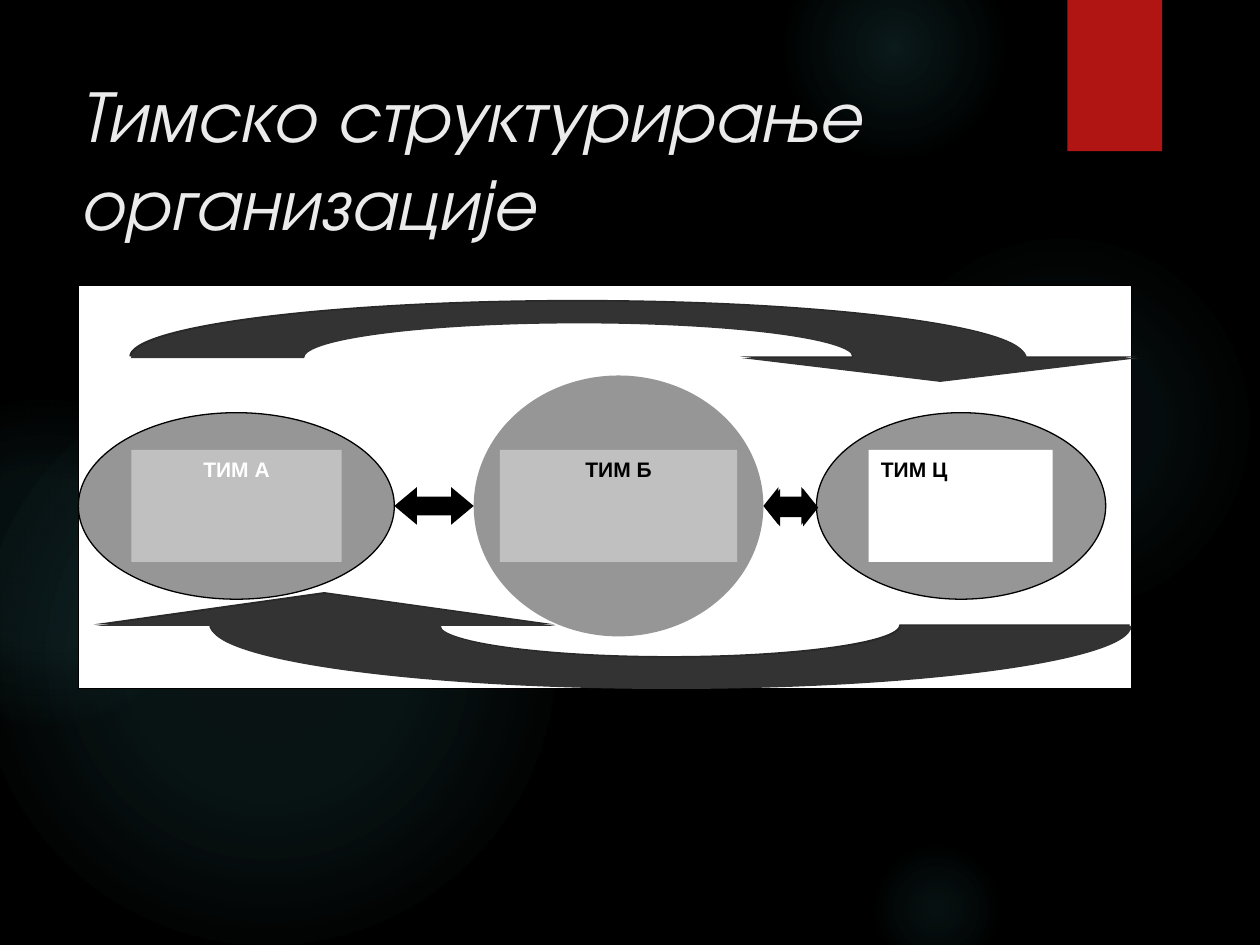
from dataclasses import dataclass

import pptx
import pptx.dml.color
import pptx.enum.shapes
import pptx.enum.text
import pptx.oxml
import pptx.oxml.ns
import pptx.util

Cm = pptx.util.Cm
Pt = pptx.util.Pt
Preset = pptx.enum.shapes.MSO_SHAPE
Align = pptx.enum.text.PP_ALIGN
Anchor = pptx.enum.text.MSO_ANCHOR


@dataclass(frozen=True)
class Theme:
    background: str = "000000"
    glow: str = "50B9C1"
    ribbon: str = "B01513"
    title: str = "EBEBEB"
    black: str = "000000"
    white: str = "FFFFFF"
    ellipse: str = "969696"
    label: str = "C0C0C0"
    curve: str = "333333"
    curve_shadow: str = "292929"
    title_font: str = "TeX Gyre Adventor"
    label_font: str = "Arial"
    title_size: int = 42
    label_size: int = 12
    line_width: float = 0.75


THEME = Theme()


@dataclass(frozen=True)
class Glow:
    """A round glow; stops are (position %, opacity %). Lengths in cm."""
    left: float
    top: float
    size: float
    stops: tuple


@dataclass(frozen=True)
class Team:
    name: str
    left: float
    width: float
    height: float
    label_left: float
    label_width: float
    label_fill: str
    text_color: str
    align: Align
    outlined: bool


@dataclass(frozen=True)
class CurvedArrow:
    """Half ring from a start foot to a head; side is 1 for over, -1 for under."""
    center: float
    base: float
    outer: tuple
    inner: tuple
    head_half_width: float
    head_height: float
    side: int


GLOWS = (
    Glow(17.5, 4.65, 7.82, ((0, 7), (36, 6), (69, 0))),
    Glow(15.8, -1.27, 4.45, ((0, 14), (36, 7), (73, 0))),
    Glow(17.5, 16.94, 2.74, ((0, 9), (36, 5), (66, 0))),
    Glow(-0.43, 7.42, 11.63, ((0, 11), (36, 10), (75, 0))),
    Glow(-2.34, 8.05, 6.55, ((0, 8), (36, 8), (72, 0))),
)
TEAMS = (
    Team("ТИМ А", 1.58, 6.37, 3.76, 2.65, 4.24, THEME.label, THEME.white, Align.CENTER, True),
    Team("ТИМ Б", 9.55, 5.84, 5.26, 10.08, 4.78, THEME.label, THEME.black, Align.CENTER, False),
    Team("ТИМ Ц", 16.46, 5.83, 3.76, 17.51, 3.71, THEME.white, THEME.black, Align.LEFT, True),
)
CURVES = (
    CurvedArrow(13.53, 12.62, (9.28, 1.27), (4.64, 0.64), 4.64, 0.65, -1),
    CurvedArrow(11.67, 7.22, (9.03, 1.14), (5.54, 0.7), 4.0, 0.48, 1),
)
QUARTER_ARC = 0.55  # Bezier handle length of a quarter ellipse
MIDDLE = 10.2
LABEL_HEIGHT = 2.26
ARROW_HEIGHT = 0.76
ARROW_HEADS = (0.6, 0.4)


def rgb(color: str):
    return pptx.dml.color.RGBColor.from_string(color)


def paint(shape, fill: str, outlined: bool = False):
    shape.shadow.inherit = False
    shape.fill.solid()
    shape.fill.fore_color.rgb = rgb(fill)
    if outlined:
        shape.line.color.rgb = rgb(THEME.black)
        shape.line.width = Pt(THEME.line_width)
    else:
        shape.line.fill.background()


def add_preset(slide, preset, left: float, top: float, width: float, height: float,
               fill: str, outlined: bool = False):
    shape = slide.shapes.add_shape(preset, Cm(left), Cm(top), Cm(width), Cm(height))
    paint(shape, fill, outlined)
    return shape


def add_shadow(shape, color: str, opacity: int, blur: float, distance: float, angle: int):
    effects = shape._element.spPr.find(pptx.oxml.ns.qn("a:effectLst"))
    effects.append(pptx.oxml.parse_xml(
        f'<a:outerShdw {pptx.oxml.ns.nsdecls("a")} blurRad="{Pt(blur)}" dist="{Pt(distance)}" '
        f'dir="{angle * 60000}" algn="ctr" rotWithShape="0"><a:srgbClr val="{color}">'
        f'<a:alpha val="{opacity * 1000}"/></a:srgbClr></a:outerShdw>'))


def write_text(shape, text: str, font_name: str, size: int, color: str, align):
    frame = shape.text_frame
    frame.word_wrap = True
    frame.text = text
    paragraph = frame.paragraphs[0]
    paragraph.alignment = align
    font = paragraph.runs[0].font
    font.name, font.size = font_name, Pt(size)
    font.color.rgb = rgb(color)
    return font


def add_glow(slide, glow: Glow):
    shape = add_preset(slide, Preset.OVAL, glow.left, glow.top, glow.size, glow.size, THEME.glow)
    stops = "".join(
        f'<a:gs pos="{position * 1000}"><a:srgbClr val="{THEME.glow}">'
        f'<a:alpha val="{opacity * 1000}"/></a:srgbClr></a:gs>'
        for position, opacity in glow.stops)
    gradient = pptx.oxml.parse_xml(
        f'<a:gradFill {pptx.oxml.ns.nsdecls("a")}><a:gsLst>{stops}</a:gsLst><a:path path="circle">'
        '<a:fillToRect l="50000" t="50000" r="50000" b="50000"/></a:path></a:gradFill>')
    properties = shape._element.spPr
    properties.replace(properties.find(pptx.oxml.ns.qn("a:solidFill")), gradient)


def add_team(slide, team: Team):
    add_preset(slide, Preset.OVAL, team.left, MIDDLE - team.height / 2,
               team.width, team.height, THEME.ellipse, team.outlined)
    label = add_preset(slide, Preset.RECTANGLE, team.label_left, MIDDLE - LABEL_HEIGHT / 2,
                       team.label_width, LABEL_HEIGHT, team.label_fill)
    label.text_frame.vertical_anchor = Anchor.TOP
    font = write_text(label, team.name, THEME.label_font, THEME.label_size,
                      team.text_color, team.align)
    font.bold = True


def curve_segments(lines: list, first: int):
    """Turn six line segments, from the given one, into two Bezier curves."""
    for start in (first, first + 3):
        curve = pptx.oxml.parse_xml(f'<a:cubicBezTo {pptx.oxml.ns.nsdecls("a")}/>')
        lines[start].addprevious(curve)
        for line in lines[start:start + 3]:
            curve.append(line[0])
            line.getparent().remove(line)


def add_curved_arrow(slide, arrow: CurvedArrow):
    def half_ring(radii: tuple) -> list:
        unit = [(-1, 0), (-1, QUARTER_ARC), (-QUARTER_ARC, 1), (0, 1),
                (QUARTER_ARC, 1), (1, QUARTER_ARC), (1, 0)]
        return [(arrow.center + arrow.side * radii[0] * x,
                 arrow.base - arrow.side * radii[1] * y) for x, y in unit]

    tip = arrow.center + arrow.side * (arrow.outer[0] + arrow.inner[0]) / 2
    reach = arrow.side * arrow.head_half_width
    head = [(tip + reach, arrow.base),
            (tip, arrow.base + arrow.side * arrow.head_height),
            (tip - reach, arrow.base)]
    outline = half_ring(arrow.inner)[::-1] + half_ring(arrow.outer) + head
    points = [(Cm(x), Cm(y)) for x, y in outline]
    builder = slide.shapes.build_freeform(*points[0])
    builder.add_line_segments(points[1:], close=True)
    shape = builder.convert_to_shape()
    lines = list(shape._element.spPr.iter(pptx.oxml.ns.qn("a:lnTo")))
    for first in (0, 7):
        curve_segments(lines, first)
    paint(shape, THEME.curve)
    add_shadow(shape, THEME.curve_shadow, 100, 0, 1.4, 225)


def main():
    presentation = pptx.Presentation()
    presentation.slide_width, presentation.slide_height = Cm(25.4), Cm(19.05)
    slide = presentation.slides.add_slide(presentation.slide_layouts[6])

    # Backdrop
    slide.background.fill.solid()
    slide.background.fill.fore_color.rgb = rgb(THEME.background)
    for glow in GLOWS:
        add_glow(slide, glow)
    ribbon = add_preset(slide, Preset.RECTANGLE, 21.52, 0, 1.91, 3.05, THEME.ribbon)
    add_shadow(ribbon, THEME.black, 45, 3, 2, 90)

    # Title
    title = slide.shapes.add_textbox(Cm(1.35), Cm(1.23), Cm(19.61), Cm(3.89))
    title.text_frame.vertical_anchor = Anchor.MIDDLE
    font = write_text(title, "Тимско структурирање организације", THEME.title_font,
                      THEME.title_size, THEME.title, Align.LEFT)
    font.italic = True

    # Team diagram
    add_preset(slide, Preset.RECTANGLE, 1.58, 5.76, 21.23, 8.12, THEME.white, True)
    for team in TEAMS:
        add_team(slide, team)
    for curve in CURVES:
        add_curved_arrow(slide, curve)

    # Double arrows fill the gaps between neighbouring teams
    for before, after, head in zip(TEAMS, TEAMS[1:], ARROW_HEADS):
        start = before.left + before.width
        arrow = add_preset(slide, Preset.LEFT_RIGHT_ARROW, start, MIDDLE - ARROW_HEIGHT / 2,
                           after.left - start, ARROW_HEIGHT, THEME.black)
        arrow.adjustments[0], arrow.adjustments[1] = 0.5, head
    add_shadow(arrow, THEME.black, 100, 0, 1.4, 45)

    presentation.save("out.pptx")


if __name__ == "__main__":
    main()
